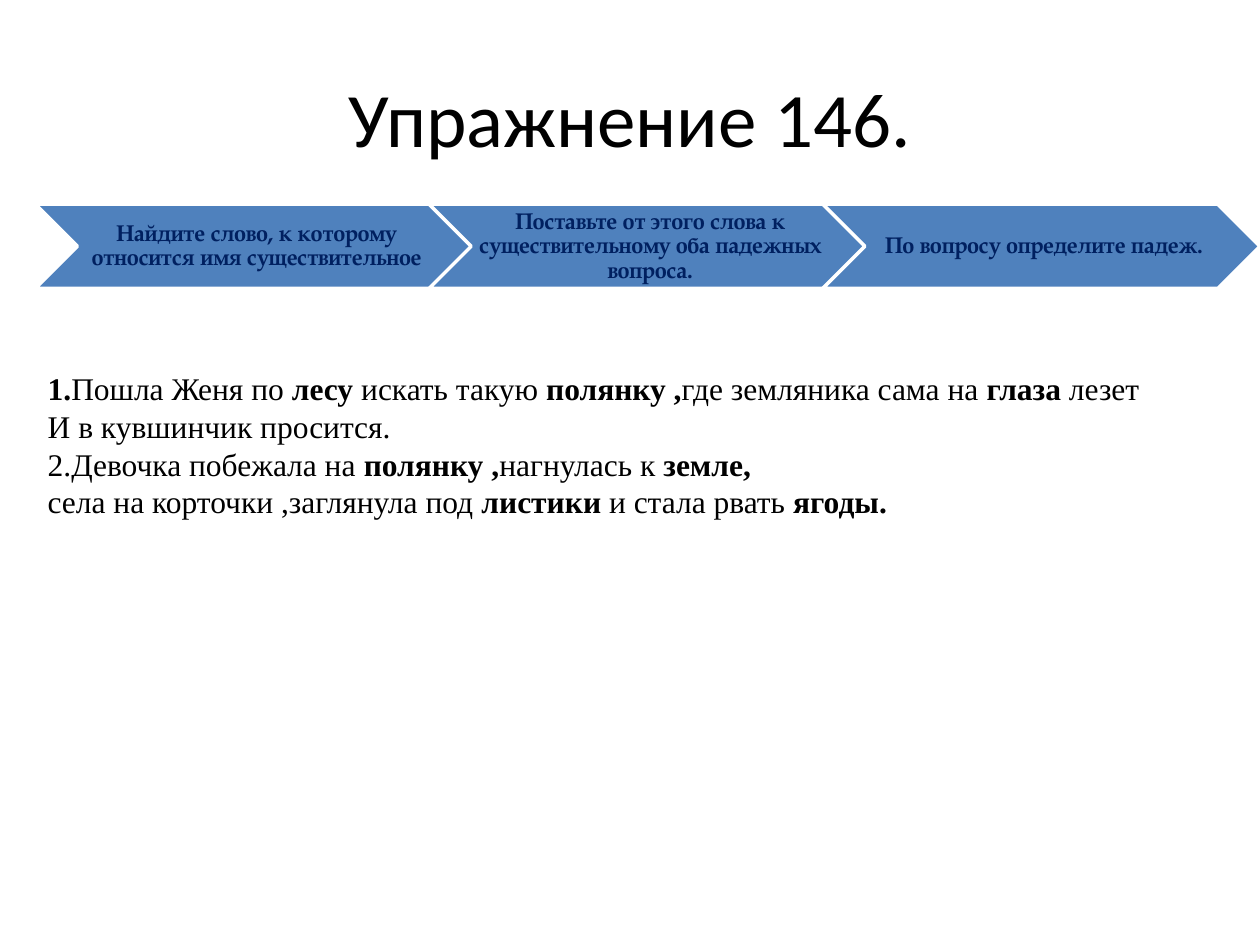
import pptx
import pptx.dml.color
import pptx.enum.shapes
import pptx.enum.text
import pptx.util
from pptx.util import Inches

ALIGN = pptx.enum.text.PP_ALIGN
MIDDLE = pptx.enum.text.MSO_ANCHOR.MIDDLE
STEPS = [
    "Найдите слово, к которому относится имя существительное",
    "Поставьте от этого слова к существительному оба падежных вопроса.",
    "По вопросу определите падеж.",
]
SENTENCES = [
    "|1.|Пошла Женя по |лесу |искать такую |полянку ,|где земляника сама на |глаза |лезет",
    "И в кувшинчик просится.",
    "2.Девочка побежала на |полянку ,|нагнулась к| земле,",
    "села на корточки ,заглянула под |листики |и стала рвать |ягоды.",
]


def colour(value):
    """Return the colour for a hex string."""
    return pptx.dml.color.RGBColor.from_string(value)


def write(para, text, font, size, ink="000000", bold=False, align=ALIGN.LEFT):
    """Write text into a paragraph, switching bold at every bar."""
    para.alignment = align
    for index, part in enumerate(text.split("|")):
        if part:
            span = para.add_run()
            span.text = part
            span.font.name = font
            span.font.size = pptx.util.Pt(size)
            span.font.bold = bold != (index % 2 == 1)
            span.font.color.rgb = colour(ink)


def place(shape, left, top, width, height):
    """Set the position and size of a shape."""
    shape.left, shape.top = Inches(left), Inches(top)
    shape.width, shape.height = Inches(width), Inches(height)


def add_title(page, text):
    """Fill and place the title placeholder."""
    place(page.shapes.title, 0.5, 0.3, 9, 1.25)
    frame = page.shapes.title.text_frame
    frame.vertical_anchor = MIDDLE
    write(frame.paragraphs[0], text, font="Calibri", size=44, align=ALIGN.CENTER)


def add_step(page, text, left):
    """Add one labelled chevron of the process."""
    chevron = page.shapes.add_shape(
        pptx.enum.shapes.MSO_SHAPE.CHEVRON,
        Inches(left), Inches(1.62), Inches(3.47), Inches(0.67))
    chevron.shadow.inherit = False
    chevron.fill.solid()
    chevron.fill.fore_color.rgb = colour("4F81BD")
    chevron.line.color.rgb = colour("FFFFFF")
    chevron.line.width = pptx.util.Pt(2)
    frame = chevron.text_frame
    frame.word_wrap = True
    frame.vertical_anchor = MIDDLE
    frame.margin_left = Inches(0.06)
    frame.margin_right = frame.margin_top = frame.margin_bottom = Inches(0.02)
    para = frame.paragraphs[0]
    para.line_spacing = 0.9
    write(para, text, font="TeX Gyre Pagella", size=13, ink="002060",
          bold=True, align=ALIGN.CENTER)


def add_sentences(page, lines):
    """Add the exercise text, one paragraph a line."""
    box = page.shapes.add_textbox(
        Inches(0.28), Inches(2.88), Inches(8.98), Inches(1.31))
    frame = box.text_frame
    frame.word_wrap = False
    frame.auto_size = pptx.enum.text.MSO_AUTO_SIZE.SHAPE_TO_FIT_TEXT
    for index, line in enumerate(lines):
        para = frame.add_paragraph() if index else frame.paragraphs[0]
        write(para, line, font="Times New Roman", size=18)


def main():
    """Build the slide and save it."""
    deck = pptx.Presentation()
    deck.slide_width, deck.slide_height = Inches(10), Inches(7.5)
    page = deck.slides.add_slide(deck.slide_layouts[5])
    add_title(page, "Упражнение 146.")
    for index, step in enumerate(STEPS):
        add_step(page, step, left=0.28 + index * 3.125)
    add_sentences(page, SENTENCES)
    deck.save("out.pptx")


if __name__ == "__main__":
    main()
